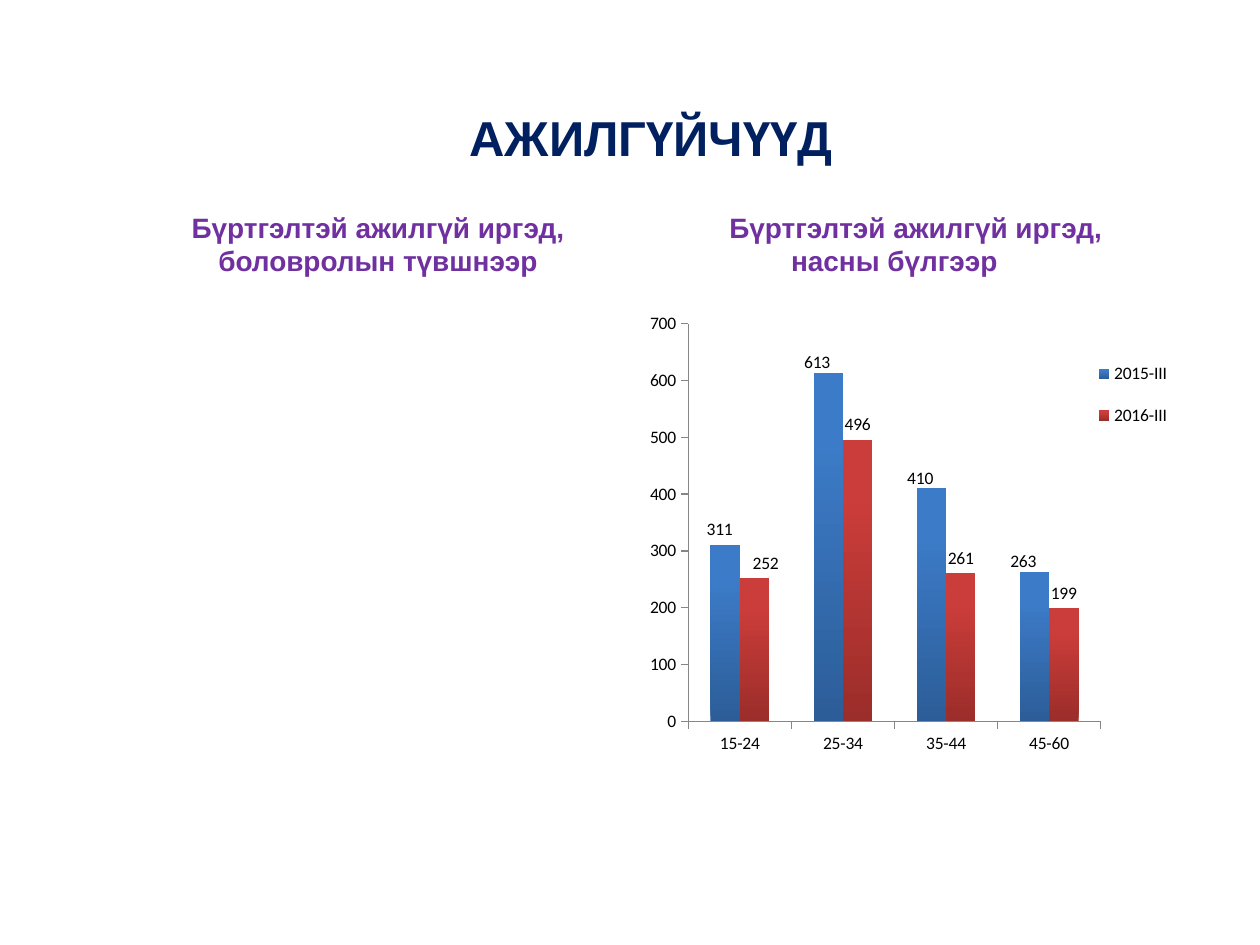
from lxml import etree
from pptx import Presentation, util as u
from pptx.chart.data import CategoryChartData
from pptx.dml.color import RGBColor
from pptx.enum import chart as charts, text
from pptx.oxml.ns import qn

WIDTH, HEIGHT = 10, 7.5
COLUMNS, ROWS = 60, 90  # grid of 1/6 by 1/12 inch
CATEGORIES = ["15-24", "25-34", "35-44", "45-60"]
# name, values, gradient from bottom to top, label shifts as shares of the chart
SERIES = [
    ("2015-III", [311, 613, 410, 263], ("2C5D98", "3C7BC7"),
     [(-0.01, 0), (-0.02, 0.01), (-0.02, 0.01), (-0.02, 0.01)]),
    ("2016-III", [252, 496, 261, 199], ("9B2D2A", "CB3D3A"), [(0.02, 0)]),
]


def color(value):
    return RGBColor.from_string(value)


def grid(column, row, columns, rows):
    """Turn grid cells into left, top, width and height."""
    across, down = u.Inches(WIDTH) / COLUMNS, u.Inches(HEIGHT) / ROWS
    return [round(size) for size in
            (column * across, row * down, columns * across, rows * down)]


def apply_format(target, values):
    for name, value in values.items():
        setattr(target, name, value)


def add_heading(slide, place, lines, size, ink, anchor, indents=None):
    """Add centred lines, or left-aligned ones when indents are given."""
    frame = slide.shapes.add_textbox(*place).text_frame
    apply_format(frame, {"word_wrap": True, "vertical_anchor": anchor})
    for index, line in enumerate(lines):
        paragraph = frame.paragraphs[0] if index == 0 else frame.add_paragraph()
        paragraph.text = line
        paragraph.alignment = text.PP_ALIGN.LEFT if indents else text.PP_ALIGN.CENTER
        if indents:
            properties = paragraph._p.get_or_add_pPr()
            properties.set("marL", str(u.Inches(indents[index])))
        apply_format(paragraph.font, {"name": "Arial", "size": u.Pt(size), "bold": True})
        paragraph.font.color.rgb = color(ink)


def set_layout(parent, position, **values):
    """Give a chart part a manual layout as its child at this position."""
    for old in parent.findall(qn("c:layout")):
        parent.remove(old)
    layout = etree.Element(qn("c:layout"))
    parent.insert(position, layout)
    manual = etree.SubElement(layout, qn("c:manualLayout"))
    for name, value in values.items():
        etree.SubElement(manual, qn(f"c:{name}")).set("val", str(value))


def format_axis(axis):
    apply_format(axis, {"has_major_gridlines": False,
                        "major_tick_mark": charts.XL_TICK_MARK.OUTSIDE,
                        "minor_tick_mark": charts.XL_TICK_MARK.NONE})
    axis.format.line.color.rgb = color("868686")
    axis.format.line.width = u.Pt(0.75)


def format_series(series, gradient, shifts):
    fill = series.format.fill
    fill.gradient()
    fill.gradient_angle = 90
    for stop, position, shade in zip(fill.gradient_stops, (0, 0.8), gradient):
        stop.position = position
        stop.color.rgb = color(shade)
    outside = charts.XL_LABEL_POSITION.OUTSIDE_END
    apply_format(series.data_labels, {
        "show_value": True, "position": outside,
        "number_format": "0", "number_format_is_linked": False})
    for index in range(len(shifts)):
        series.points[index].data_label.position = outside
    for label, (x, y) in zip(series._element.iter(qn("c:dLbl")), shifts):
        set_layout(label, 1, x=x, y=y)


def add_age_chart(slide, place):
    data = CategoryChartData(number_format="0")
    data.categories = CATEGORIES
    for name, values, *_ in SERIES:
        data.add_series(name, values)
    chart = slide.shapes.add_chart(
        charts.XL_CHART_TYPE.COLUMN_CLUSTERED, *place, data).chart
    apply_format(chart, {"has_title": False, "has_legend": True})
    apply_format(chart.font, {"name": "Calibri", "size": u.Pt(10)})
    chart.font.color.rgb = color("000000")
    apply_format(chart.legend, {"position": charts.XL_LEGEND_POSITION.RIGHT,
                                "include_in_layout": False})
    set_layout(chart.legend._element, 1, xMode="edge", yMode="edge",
               x=0.81, y=0.09, w=0.15, h=0.22)
    set_layout(chart._chartSpace.chart.plotArea, 0, layoutTarget="inner",
               xMode="edge", yMode="edge", x=0.086, y=0.051, w=0.741, h=0.833)
    for axis in (chart.category_axis, chart.value_axis):
        format_axis(axis)
    apply_format(chart.value_axis, {"minimum_scale": 0, "maximum_scale": 700,
                                    "major_unit": 100})
    plot = chart.plots[0]
    apply_format(plot, {"gap_width": 150, "overlap": 0, "vary_by_categories": False})
    for series, (_, _, gradient, shifts) in zip(plot.series, SERIES):
        format_series(series, gradient, shifts)


def main():
    presentation = Presentation()
    apply_format(presentation, {"slide_width": u.Inches(WIDTH),
                                "slide_height": u.Inches(HEIGHT)})
    slide = presentation.slides.add_slide(presentation.slide_layouts[6])
    middle, bottom = text.MSO_ANCHOR.MIDDLE, text.MSO_ANCHOR.BOTTOM
    add_heading(slide, grid(5, 8, 52, 10), ["АЖИЛГҮЙЧҮҮД"], 28, "002060", middle)
    add_heading(slide, grid(5, 19, 26, 8),
                ["Бүртгэлтэй ажилгүй иргэд, боловролын түвшнээр"],
                16, "7030A0", bottom)
    add_heading(slide, grid(33, 19, 24, 8),
                ["Бүртгэлтэй ажилгүй иргэд,", "насны бүлгээр"],
                16, "7030A0", bottom, indents=(0.19, 0.68))
    add_age_chart(slide, grid(30.5, 28.5, 26.5, 45.5))
    presentation.save("out.pptx")


if __name__ == "__main__":
    main()
